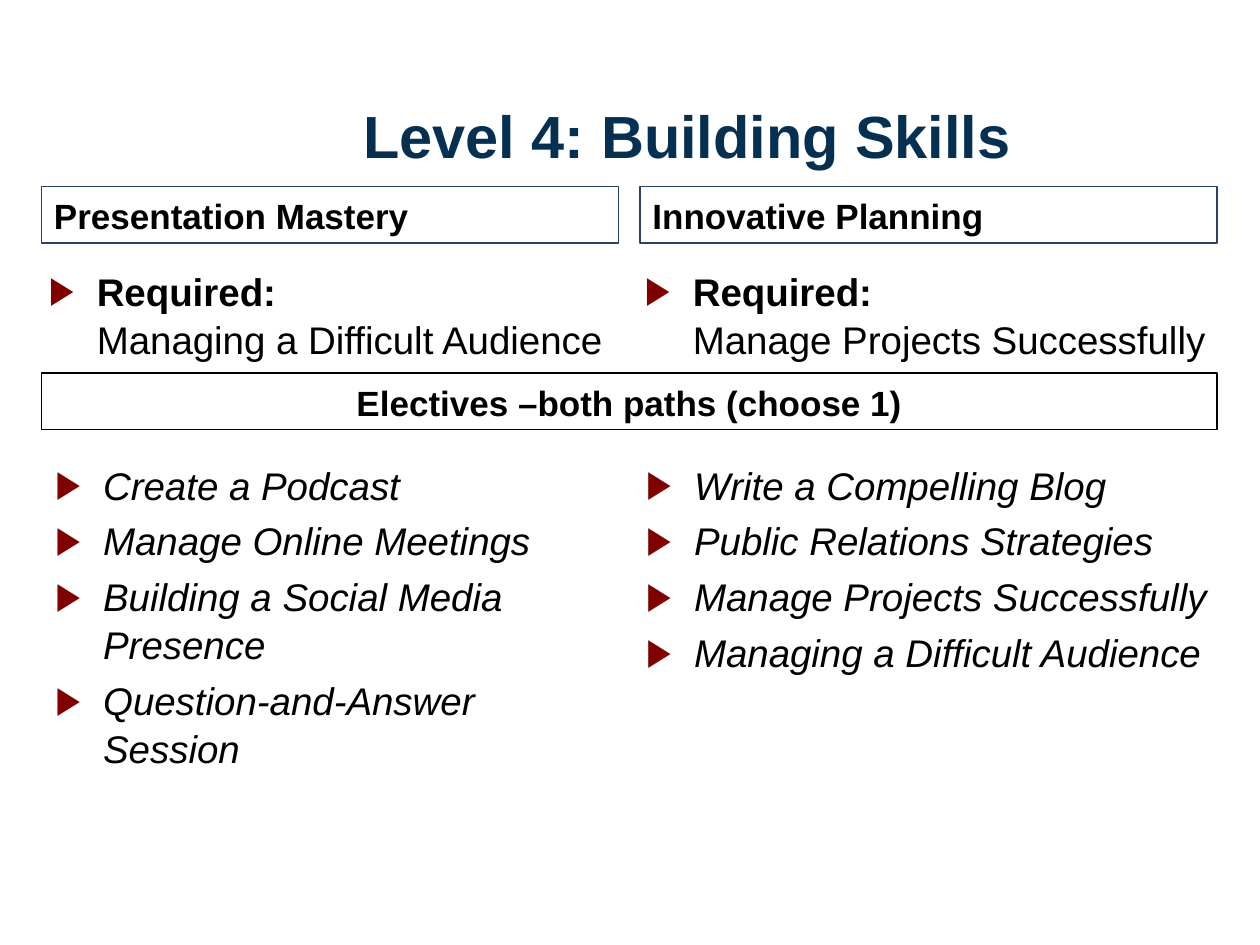
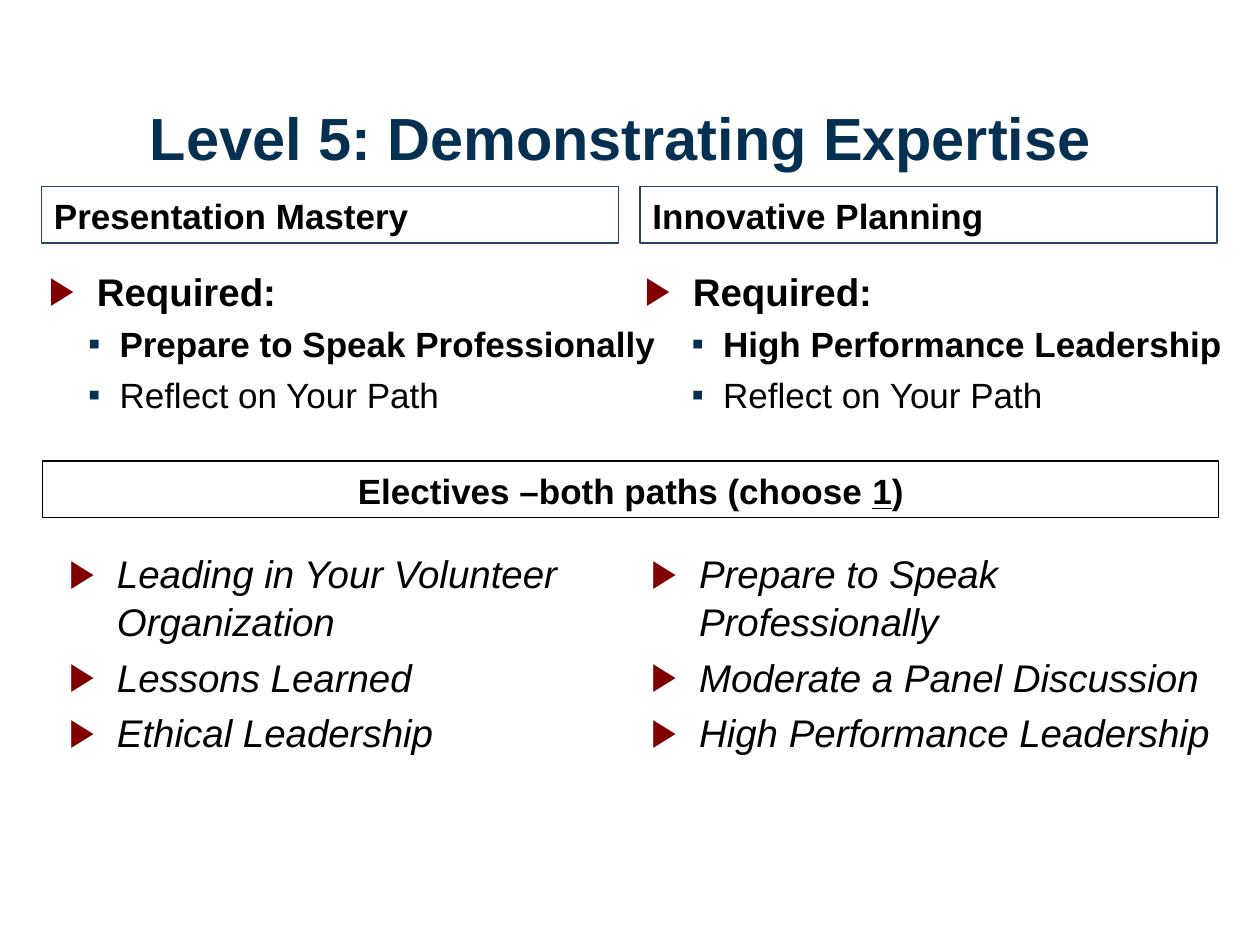
from pptx import Presentation
from pptx.dml.color import RGBColor
from pptx.enum import shapes, text
from pptx.oxml.xmlchemy import OxmlElement
from pptx.util import Inches, Pt

NAVY = RGBColor(0x06, 0x30, 0x52)
SLATE = RGBColor(0x29, 0x43, 0x64)
MAROON = RGBColor(0x80, 0x00, 0x00)
BLACK = RGBColor(0, 0, 0)
FONT = "Arial"
LINE_SPACING = 1.04
SPACE_SHARE = 0.2  # space before a paragraph, as a share of its size

PATHS = ["Presentation Mastery", "Innovative Planning"]

# A paragraph is a list of (words, styles) runs: b bold, i italic, u underlined.
REQUIRED = ("Required:", "b")

LEVELS = [
    {
        "title": "Level 4: Building Skills",
        "title_at": (1.53, 0.71),
        "required": [
            [[("Required:\v", "b"), ("Managing a Difficult Audience", "")]],
            [[("Required:\v", "b"), ("Manage Projects Successfully", "")]],
        ],
        "required_widths": (4.63, 4.79),
        "sub_indents": (0.56, 0.62),
        "bar": [("Electives –both paths (choose 1)", "b")],
        "bar_at": (0.33, 2.96),
        "electives": [
            ["Create a Podcast", "Manage Online Meetings",
             "Building a Social Media Presence", "Question-and-Answer Session"],
            ["Write a Compelling Blog", "Public Relations Strategies",
             "Manage Projects Successfully", "Managing a Difficult Audience"],
        ],
        "electives_lefts": (0.34, 5.03),
    },
    {
        "title": "Level 5: Demonstrating Expertise",
        "title_at": (1, 0.73),
        "required": [
            [[REQUIRED], [("Prepare to Speak Professionally", "b")],
             [("Reflect on Your Path", "")]],
            [[REQUIRED], [("High Performance Leadership", "b")],
             [("Reflect on Your Path", "")]],
        ],
        "required_widths": (5.21, 4.79),
        "sub_indents": (0.56, 0.62),
        "bar": [("Electives –both paths (choose ", "b"), ("1", "bu"), (")", "b")],
        "bar_at": (0.34, 3.66),
        "electives": [
            ["Leading in Your Volunteer Organization", "Lessons Learned",
             "Ethical Leadership"],
            ["Prepare to Speak Professionally", "Moderate a Panel Discussion",
             "High Performance Leadership"],
        ],
        "electives_lefts": (0.45, 5.07),
    },
]

TITLE_SIZE = (7.85, 0.69)
HEADER_LEFTS, HEADER_TOP, HEADER_WIDTH = (0.33, 5.08), 1.48, 4.58
BAR_WIDTH, BAND_HEIGHT = 9.33, 0.45
REQUIRED_LEFTS, REQUIRED_TOP, REQUIRED_HEIGHT = (0.29, 5.02), 2.06, 0.98
ELECTIVES_DROP, ELECTIVES_WIDTH, ELECTIVES_HEIGHT = 0.64, 4.65, 3.1


def add_bullet(paragraph, symbol, color, margin, hanging):
    properties = paragraph._p.get_or_add_pPr()
    properties.set("marL", str(Inches(margin)))
    properties.set("indent", str(-Inches(hanging)))
    bullet_color = OxmlElement("a:buClr")
    rgb = OxmlElement("a:srgbClr")
    rgb.set("val", str(color))
    bullet_color.append(rgb)
    typeface = OxmlElement("a:buFont")
    typeface.set("typeface", FONT)
    character = OxmlElement("a:buChar")
    character.set("char", symbol)
    for element in (bullet_color, typeface, character):
        properties.append(element)


def write(frame, runs, size=22, color=BLACK, align=text.PP_ALIGN.LEFT,
          bullet=None, level=0, first=False):
    """Add one paragraph of (words, styles) runs to a text frame."""
    paragraph = frame.paragraphs[0] if first else frame.add_paragraph()
    paragraph.alignment = align
    paragraph.level = level
    paragraph.line_spacing = LINE_SPACING
    if not first:
        paragraph.space_before = Pt(size * SPACE_SHARE)
    if bullet:
        add_bullet(paragraph, *bullet)
    for words, styles in runs:
        run = paragraph.add_run()
        run.text = words.rstrip("\v")
        if words.endswith("\v"):
            paragraph.add_line_break()
        font = run.font
        font.name, font.size = FONT, Pt(size)
        font.color.rgb = color
        font.bold = "b" in styles
        font.italic = "i" in styles
        font.underline = "u" in styles


def add_box(slide, left, top, width, height):
    box = slide.shapes.add_textbox(*map(Inches, (left, top, width, height)))
    box.text_frame.word_wrap = True
    return box.text_frame


def add_band(slide, left, top, width, runs, line_color, align):
    """Draw an outlined heading band."""
    band = slide.shapes.add_shape(
        shapes.MSO_SHAPE.RECTANGLE,
        *map(Inches, (left, top, width, BAND_HEIGHT)))
    band.shadow.inherit = False
    band.fill.background()
    band.line.color.rgb = line_color
    band.line.width = Pt(0.75)
    band.text_frame.word_wrap = True
    band.text_frame.vertical_anchor = text.MSO_ANCHOR.BOTTOM
    write(band.text_frame, runs, size=20, align=align, first=True)


def add_level(slide, level):
    main_bullet = ("▶", MAROON, 0.38, 0.38)
    title = add_box(slide, *level["title_at"], *TITLE_SIZE)
    title.vertical_anchor = text.MSO_ANCHOR.MIDDLE
    write(title, [(level["title"], "b")], size=34, color=NAVY,
          align=text.PP_ALIGN.CENTER, first=True)

    bar_left, bar_top = level["bar_at"]
    add_band(slide, bar_left, bar_top, BAR_WIDTH, level["bar"], BLACK,
             text.PP_ALIGN.CENTER)

    for side, path in enumerate(PATHS):
        add_band(slide, HEADER_LEFTS[side], HEADER_TOP, HEADER_WIDTH,
                 [(path, "b")], SLATE, text.PP_ALIGN.LEFT)

        required = add_box(slide, REQUIRED_LEFTS[side], REQUIRED_TOP,
                           level["required_widths"][side], REQUIRED_HEIGHT)
        sub_bullet = ("▪", NAVY, level["sub_indents"][side], 0.25)
        for row, runs in enumerate(level["required"][side]):
            if row == 0:
                write(required, runs, bullet=main_bullet, first=True)
            else:
                write(required, runs, size=20, bullet=sub_bullet, level=1)

        electives = add_box(slide, level["electives_lefts"][side],
                            bar_top + ELECTIVES_DROP,
                            ELECTIVES_WIDTH, ELECTIVES_HEIGHT)
        for row, project in enumerate(level["electives"][side]):
            write(electives, [(project, "i")], bullet=main_bullet,
                  first=row == 0)


def main():
    deck = Presentation()
    deck.slide_width, deck.slide_height = Inches(10), Inches(7.5)
    for level in LEVELS:
        add_level(deck.slides.add_slide(deck.slide_layouts[6]), level)
    deck.save("out.pptx")


if __name__ == "__main__":
    main()
